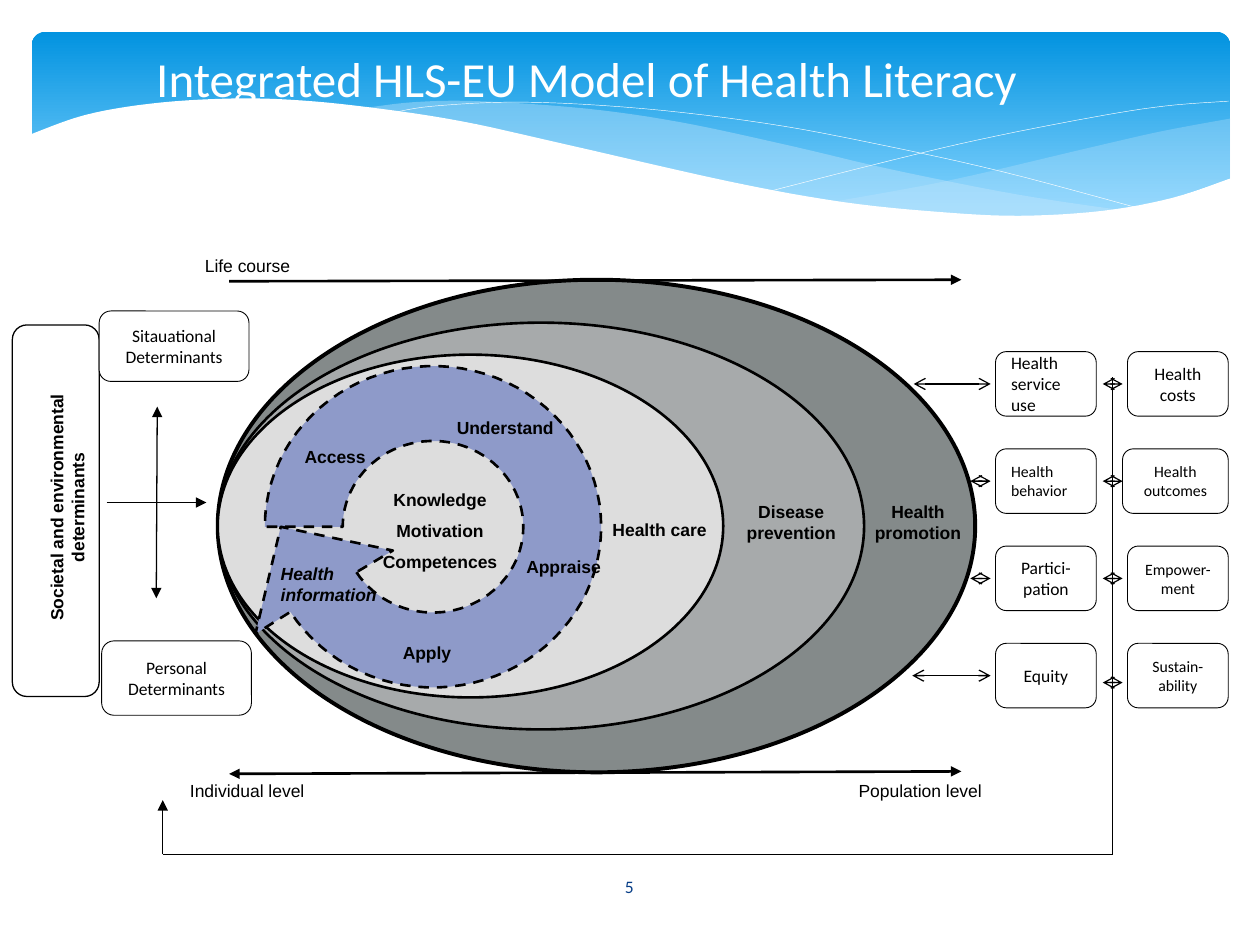
from dataclasses import dataclass
from math import cos, radians, sin

from lxml.etree import SubElement
from pptx import Presentation
from pptx.dml.color import RGBColor
from pptx.enum.dml import MSO_LINE as Dash
from pptx.enum.shapes import MSO_CONNECTOR as Conn, MSO_SHAPE as Form
from pptx.enum.text import MSO_ANCHOR as Anchor, PP_ALIGN as Align
from pptx.oxml.ns import qn
from pptx.util import Cm, Pt


@dataclass(frozen=True)
class Theme:
    """Colours, fonts and type sizes of the slide."""
    ink: str = "000000"
    paper: str = "FFFFFF"
    sky: str = "0293E0"
    haze: str = "83D3FE"
    wave: str = "C6E7FC"
    ring: str = "8E9AC9"
    page: str = "073E87"
    shells: tuple = ("848A8A", "A7AAAB", "DDDDDD")
    sans: str = "Arial"
    body: str = "Calibri"
    title: int = 28
    text: int = 10
    small: int = 9


@dataclass(frozen=True)
class Box:
    """A frame in centimetres."""
    x: float
    y: float
    w: float
    h: float

    def sub(self, x, y, w, h):
        """Return a frame placed relative to this one."""
        return Box(self.x + x, self.y + y, w, h)

    def spot(self, x, y):
        """Return a point relative to this frame as lengths."""
        return Cm(self.x + x), Cm(self.y + y)

    def rect(self):
        """Return the frame as lengths."""
        return Cm(self.x), Cm(self.y), Cm(self.w), Cm(self.h)

    def turn(self):
        """Return the frame that covers this one after a quarter turn."""
        return Box(self.x + (self.w - self.h) / 2, self.y + (self.h - self.w) / 2, self.h, self.w)


T = Theme()
rgb = RGBColor.from_string


def paint(shape, fill=None, line=None, width=0.5, alpha=None):
    """Set fill, outline and opacity of a shape."""
    shape.shadow.inherit = False
    if fill:
        shape.fill.solid()
        shape.fill.fore_color.rgb = rgb(fill)
        if alpha:
            tone = shape._element.spPr.find(qn("a:solidFill"))[0]
            SubElement(tone, qn("a:alpha"), val=str(alpha * 1000))
    else:
        shape.fill.background()
    if line:
        shape.line.color.rgb = rgb(line)
        shape.line.width = Pt(width)
    else:
        shape.line.fill.background()


def write(shape, text, font=T.sans, size=T.text, color=T.ink, bold=False, italic=False,
          align=Align.LEFT, anchor=Anchor.TOP, lead=None, gap=None):
    """Put styled text in a shape."""
    frame = shape.text_frame
    frame.word_wrap, frame.vertical_anchor, frame.text = True, anchor, text
    for para in frame.paragraphs:
        para.alignment, para.line_spacing, para.space_after = align, lead, gap
        face = para.font
        face.name, face.size, face.bold, face.italic = font, Pt(size), bold, italic
        face.color.rgb = rgb(color)


def label(slide, box, text, **style):
    """Add a text box."""
    shape = slide.shapes.add_textbox(*box.rect())
    write(shape, text, **style)
    return shape


def card(slide, box, text, align=Align.CENTER, size=T.text):
    """Add a white rounded box with text."""
    shape = slide.shapes.add_shape(Form.ROUNDED_RECTANGLE, *box.rect())
    paint(shape, T.paper, T.ink)
    write(shape, text, T.body, size, align=align, anchor=Anchor.MIDDLE)
    return shape


def link(slide, box, start, end, width=0.75, head=None, tail=None):
    """Add a straight line with optional arrowheads."""
    line = slide.shapes.add_connector(Conn.STRAIGHT, *box.spot(*start), *box.spot(*end))
    line.line.color.rgb = rgb(T.ink)
    line.line.width = Pt(width)
    props = line._element.spPr
    for tag, kind in (("a:headEnd", head), ("a:tailEnd", tail)):
        if kind:
            SubElement(props.find(qn("a:ln")), qn(tag), type=kind)
    SubElement(props, qn("a:effectLst"))
    return line


def outline(slide, box, points, close=True):
    """Add a freeform through points relative to the box."""
    first, *rest = [box.spot(*point) for point in points]
    pen = slide.shapes.build_freeform(*first)
    pen.add_line_segments(rest, close=close)
    return pen.convert_to_shape()


def smooth(knots, steps=6):
    """Return a Catmull-Rom curve through the knots."""
    pads = [knots[0], *knots, knots[-1]]
    curve = []
    for a, b, c, d in zip(pads, pads[1:], pads[2:], pads[3:]):
        for t in (step / steps for step in range(steps)):
            curve.append(tuple(
                q + t * (r - p) / 2 + t * t * (2 * p - 5 * q + 4 * r - s) / 2
                + t ** 3 * (3 * q - p - 3 * r + s) / 2
                for p, q, r, s in zip(a, b, c, d)))
    return curve + [knots[-1]]


def arc(x, y, rx, ry, start, end):
    """Return points on an ellipse between two angles in degrees."""
    step = 4 if end > start else -4
    return [(x + rx * cos(radians(a)), y + ry * sin(radians(a)))
            for a in range(start, end + step, step)]


def header(slide, box):
    """Draw the gradient banner with its waves and title."""
    band = slide.shapes.add_shape(Form.ROUNDED_RECTANGLE, *box.rect())
    band.adjustments[0] = 0.07
    paint(band)
    band.fill.gradient()
    band.fill.gradient_angle = 270
    for stop, color, place in zip(band.fill.gradient_stops, (T.sky, T.haze), (0, 0.9)):
        stop.color.rgb, stop.position = rgb(color), place
    right = (smooth([(24.16, 1.75), (22.76, 2.01), (21.23, 2.36), (18.49, 3), (16.15, 3.43)])
             + smooth([(16.15, 3.43), (17.63, 3.61), (19.48, 3.73), (21.06, 3.68),
                       (22.56, 3.48), (24.16, 2.95)]))
    mid = (smooth([(22.05, 3.61), (19.86, 3.28), (17.3, 2.77), (15.34, 2.31), (13.11, 1.83),
                   (11.18, 1.55), (9.02, 1.4), (7.7, 1.42), (6.63, 1.55)])
           + smooth([(6.63, 1.55), (8.05, 1.75), (10.77, 2.31), (13.74, 3), (15.88, 3.38),
                     (17.7, 3.63), (19.58, 3.76), (20.9, 3.73), (22.05, 3.61)]))
    for points, alpha in ((right, 29), (mid, 40)):
        paint(outline(slide, box, points), T.wave, alpha=alpha)
    for knots in ([(7.21, 1.65), (8.1, 1.5), (9.93, 1.42), (12.32, 1.55), (14.81, 1.85),
                   (17.02, 2.26), (19.56, 2.82), (22.4, 3.58)],
                  [(14.94, 3.2), (17.02, 2.67), (19.08, 2.18), (21.36, 1.73),
                   (22.83, 1.5), (24.13, 1.4)]):
        paint(outline(slide, box, smooth(knots), False), line=T.paper, width=0.25)
    edge = smooth([(24.18, 2.95), (22.99, 3.35), (21.59, 3.61), (19.91, 3.71), (18.26, 3.63),
                   (16.33, 3.43), (14.07, 3.02), (10.72, 2.26), (8.64, 1.8), (6.78, 1.52),
                   (5.21, 1.37), (3.86, 1.35), (2.39, 1.45), (1.07, 1.68), (-0.05, 2.08)])
    paint(outline(slide, box, edge + [(-0.05, 5.05), (24.18, 5.05)]), T.paper)
    label(slide, box.sub(2.26, -0.44, 23.37, 2.74), "Integrated HLS-EU Model of Health Literacy",
          font=T.body, size=T.title, color=T.paper, anchor=Anchor.MIDDLE)


def model(slide, box):
    """Draw the nested ellipses, the ring arrow and their labels."""
    sizes = ((box.w, box.h, 2.25), (13.03, 8.2, 1.5), (10.19, 6.91, 1.5))
    for (w, h, width), fill in zip(sizes, T.shells):
        shell = slide.shapes.add_shape(Form.OVAL, *box.sub(0, (box.h - h) / 2, w, h).rect())
        paint(shell, fill, T.ink, width)
    hub = (4.34, 4.98)
    ring = outline(slide, box, arc(*hub, 1.82, 1.73, 508, 180) + arc(*hub, 3.39, 3.24, 180, 508)
                   + [(0.76, 7.14), (1.27, 4.98), (3.53, 5.46)])
    paint(ring, T.ring, T.ink, 1.5)
    ring.line.dash_style = Dash.DASH
    label(slide, box.sub(3.07, 4.09, 2.82, 1.96), "Knowledge\nMotivation\nCompetences",
          bold=True, align=Align.CENTER, gap=Pt(5.7))
    label(slide, box.sub(1.02, 5.59, 3.18, 1.09), "Health\ninformation", bold=True, italic=True)
    for text, x, y, w, align in (("Access", 1.5, 3.18, 2.39, Align.LEFT),
                                 ("Understand", 4.32, 2.59, 2.95, Align.CENTER),
                                 ("Appraise", 5.97, 5.41, 2.57, Align.LEFT),
                                 ("Apply", 3.48, 7.14, 1.96, Align.LEFT),
                                 ("Health care", 7.65, 4.65, 2.51, Align.CENTER)):
        label(slide, box.sub(x, y, w, 0.74), text, bold=True, align=align, lead=1.1)
    for text, x, w in (("Health promotion", 12.83, 2.57), ("Disease prevention", 10.19, 2.74)):
        label(slide, box.sub(x, 4.33, w, 1.09), text, bold=True, align=Align.CENTER)
    for text, x, y in (("Life course", -0.51, -0.66), ("Individual level", -0.81, 9.91),
                       ("Population level", 12.67, 9.91)):
        label(slide, box.sub(x, y, 4.67, 0.74), text, lead=1.1)
    for y, drop, head in ((0, 0.03, None), (9.91, 0.05, "triangle")):
        link(slide, box, (0.23, y + drop), (14.99, y), 1.5, head, "triangle")


def causes(slide, box):
    """Draw the determinants on the left."""
    frame = box.sub(0, 0.28, 1.75, 7.49).turn()
    side = slide.shapes.add_shape(Form.ROUNDED_RECTANGLE, *frame.rect())
    paint(side, line=T.ink, width=0.75)
    name = label(slide, box.sub(0.55, 0.66, 1.09, 6.6).turn(),
                 "Societal and environmental determinants", bold=True, align=Align.CENTER)
    side.rotation = name.rotation = 270
    card(slide, box.sub(1.75, 0, 3.02, 1.42), "Sitauational Determinants")
    card(slide, box.sub(1.8, 6.65, 3.02, 1.5), "Personal Determinants")
    link(slide, box, (2.92, 1.93), (2.9, 5.79), head="triangle", tail="triangle")
    link(slide, box, (1.9, 3.86), (3.91, 3.86), tail="triangle")


def effects(slide, box):
    """Draw the two columns of outcomes and their arrows."""
    rows = (("Health service use", Align.JUSTIFY, T.text, 0.03, "Health costs", T.text, 4.34, 0),
            ("Health behavior", Align.LEFT, T.small, 1.17, "Health outcomes", T.small, 4.24, 0),
            ("Partici-\npation", Align.CENTER, T.text, 1.17, "Empower-ment", T.small, 4.34, 0),
            ("Equity", Align.CENTER, T.text, 0, "Sustain-\nability", T.small, 4.34, 0.14))
    ends = {"head": "arrow", "tail": "arrow"}
    for row, (near, align, size, start, far, tiny, x, drop) in enumerate(rows):
        y = row * 1.96
        mid = y + 0.65
        card(slide, box.sub(1.68, y, 2.03, 1.3), near, align, size)
        goal = card(slide, box.sub(x, y, box.w - x, 1.3), far, size=tiny)
        link(slide, box, (start, mid), (1.58, mid), **ends)
        line = link(slide, box, (3.84, mid + drop), (4.24, mid + drop), **ends)
        if x == 4.24:
            line.end_connect(goal, 1)


def loop(slide, box):
    """Draw the feedback line below the model."""
    link(slide, box, (box.w, box.h), (box.w, 0))
    link(slide, box, (0, box.h), (box.w, box.h))
    link(slide, box, (0, box.h), (0, box.h - 1.09), tail="triangle")


def main():
    """Build and save the slide."""
    deck = Presentation()
    deck.slide_width, deck.slide_height = Cm(25.4), Cm(19.05)
    slide = deck.slides.add_slide(deck.slide_layouts[6])
    header(slide, Box(0.64, 0.64, 24.16, 3.96))
    effects(slide, Box(18.39, 7.09, 6.37, 7.18))
    model(slide, Box(4.39, 5.64, 15.27, 9.93))
    causes(slide, Box(0.25, 6.27, 4.82, 8.15))
    loop(slide, Box(3.28, 7.59, 19.15, 9.63))
    label(slide, Box(11.07, 17.37, 3.23, 1.02), "5", font=T.body, color=T.page,
          align=Align.CENTER, anchor=Anchor.MIDDLE)
    deck.save("out.pptx")


if __name__ == "__main__":
    main()
